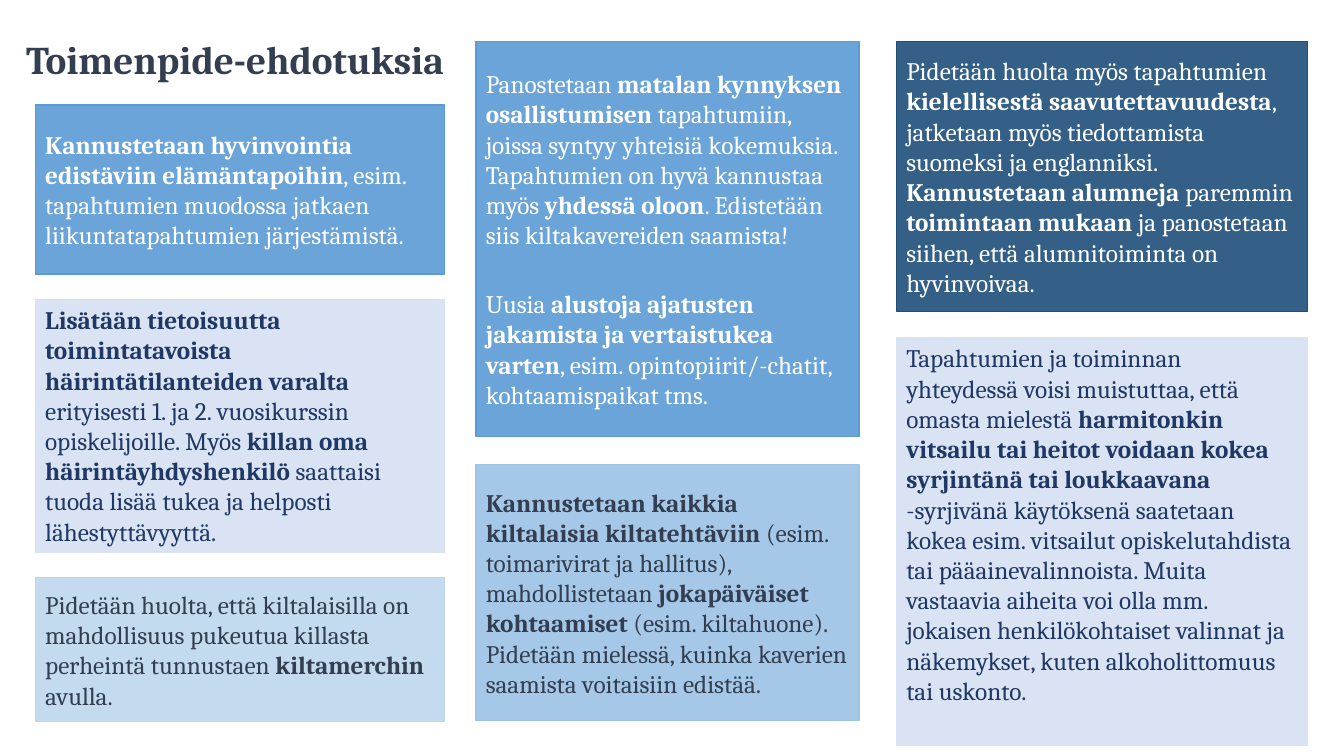
from lxml.etree import SubElement
from pptx import Presentation
from pptx.dml.color import RGBColor
from pptx.enum.shapes import MSO_SHAPE
from pptx.enum.text import MSO_ANCHOR, PP_ALIGN
from pptx.oxml.ns import qn
from pptx.util import Inches, Pt

FONT = "Cambria"
WHITE, SLATE, NAVY = "FFFFFF", "333F50", "1F3864"
BLUE, DEEP_BLUE, SKY, ICE, PALE = "5B9BD5", "1F4E79", "9DC3E6", "BDD7EE", "DAE3F3"
PARAGRAPH_GAP = 27.5

ENCOURAGE_HABITS = [
    "*Kannustetaan hyvinvointia edistäviin elämäntapoihin*, esim. tapahtumien muodossa "
    "jatkaen liikuntatapahtumien järjestämistä."
]
HARASSMENT_AWARENESS = [
    "*Lisätään tietoisuutta toimintatavoista häirintätilanteiden varalta* erityisesti "
    "1. ja 2. vuosikurssin opiskelijoille. Myös *killan oma häirintäyhdyshenkilö* "
    "saattaisi tuoda lisää tukea ja helposti lähestyttävyyttä."
]
GUILD_MERCH = [
    "Pidetään huolta, että kiltalaisilla on mahdollisuus pukeutua killasta perheintä "
    "tunnustaen *kiltamerchin* avulla."
]
LOW_THRESHOLD = [
    "Panostetaan *matalan kynnyksen osallistumisen *tapahtumiin, joissa syntyy yhteisiä "
    "kokemuksia. Tapahtumien on hyvä kannustaa myös *yhdessä oloon*. Edistetään siis "
    "kiltakavereiden saamista!",
    "Uusia *alustoja ajatusten jakamista ja vertaistukea varten*, esim. "
    "opintopiirit/-chatit, kohtaamispaikat tms.",
]
GUILD_ROLES = [
    "*Kannustetaan kaikkia kiltalaisia kiltatehtäviin *(esim. toimarivirat ja hallitus), "
    "mahdollistetaan *jokapäiväiset kohtaamiset *(esim. kiltahuone). Pidetään mielessä, "
    "kuinka kaverien saamista voitaisiin edistää."
]
LANGUAGE_ACCESS = [
    "Pidetään huolta myös tapahtumien *kielellisestä saavutettavuudesta*, jatketaan myös "
    "tiedottamista suomeksi ja englanniksi. *Kannustetaan alumneja *paremmin* toimintaan "
    "mukaan *ja panostetaan siihen, että alumnitoiminta on hyvinvoivaa."
]
HARMLESS_JOKES = [
    "Tapahtumien ja toiminnan yhteydessä voisi muistuttaa, että omasta mielestä "
    "*harmitonkin vitsailu tai heitot voidaan kokea syrjintänä tai loukkaavana "
    "*-syrjivänä käytöksenä saatetaan kokea esim. vitsailut opiskelutahdista tai "
    "pääainevalinnoista. Muita vastaavia aiheita voi olla mm. jokaisen henkilökohtaiset "
    "valinnat ja näkemykset, kuten alkoholittomuus tai uskonto."
]


def color(hex_value):
    return RGBColor.from_string(hex_value)


def add_run(paragraph, text, size, ink, bold):
    run = paragraph.add_run()
    run.text = text
    run.font.name = FONT
    run.font.size = Pt(size)
    run.font.bold = bold
    run.font.color.rgb = color(ink)


def add_marked_runs(paragraph, marked, ink):
    for index, part in enumerate(marked.split("*")):
        if part:
            add_run(paragraph, part, 18, ink, index % 2 == 1)


def add_title(slide, left, top, width, height):
    title = slide.shapes.add_textbox(Inches(left), Inches(top), Inches(width), Inches(height))
    title.text_frame.word_wrap = True
    heading = title.text_frame.paragraphs[0]
    heading.line_spacing = 0.9
    add_run(heading, "Toimenpide-ehdotuksia", 28, SLATE, True)


def add_card(slide, left, top, width, height, fill, ink, paragraphs):
    card = slide.shapes.add_shape(
        MSO_SHAPE.RECTANGLE, Inches(left), Inches(top), Inches(width), Inches(height)
    )
    card.shadow.inherit = False
    card.fill.solid()
    card.fill.fore_color.rgb = color(fill)
    card.line.color.rgb = color(fill)
    card.line.width = Pt(1)
    frame = card.text_frame
    frame.word_wrap = True
    if fill == PALE:
        frame.vertical_anchor = MSO_ANCHOR.TOP
    else:
        frame.vertical_anchor = MSO_ANCHOR.MIDDLE
        fill_color = card.fill._xPr.find(qn("a:solidFill"))[0]
        SubElement(fill_color, qn("a:alpha"), val="90000")
    for index, marked in enumerate(paragraphs):
        paragraph = frame.add_paragraph() if index else frame.paragraphs[0]
        paragraph.alignment = PP_ALIGN.LEFT
        is_last = index == len(paragraphs) - 1
        if not is_last:
            paragraph.space_after = Pt(PARAGRAPH_GAP)
        elif fill != PALE:
            paragraph.space_after = Pt(3)
        add_marked_runs(paragraph, marked, ink)


def add_column(slide, left, width, cards):
    for top, height, fill, ink, paragraphs in cards:
        add_card(slide, left, top, width, height, fill, ink, paragraphs)


def main():
    deck = Presentation()
    deck.slide_width, deck.slide_height = Inches(13.33), Inches(7.5)
    slide = deck.slides.add_slide(deck.slide_layouts[6])
    add_title(slide, 0.16, 0.35, 7.88, 0.96)
    add_column(slide, 0.35, 4.06, [
        (1.04, 1.68, BLUE, WHITE, ENCOURAGE_HABITS),
        (2.97, 2.51, PALE, NAVY, HARASSMENT_AWARENESS),
        (5.73, 1.43, ICE, SLATE, GUILD_MERCH),
    ])
    add_column(slide, 4.72, 3.8, [
        (0.41, 3.92, BLUE, WHITE, LOW_THRESHOLD),
        (4.61, 2.54, SKY, SLATE, GUILD_ROLES),
    ])
    add_column(slide, 8.89, 4.08, [
        (0.41, 2.68, DEEP_BLUE, WHITE, LANGUAGE_ACCESS),
        (3.35, 4.04, PALE, NAVY, HARMLESS_JOKES),
    ])
    deck.save("out.pptx")


if __name__ == "__main__":
    main()
